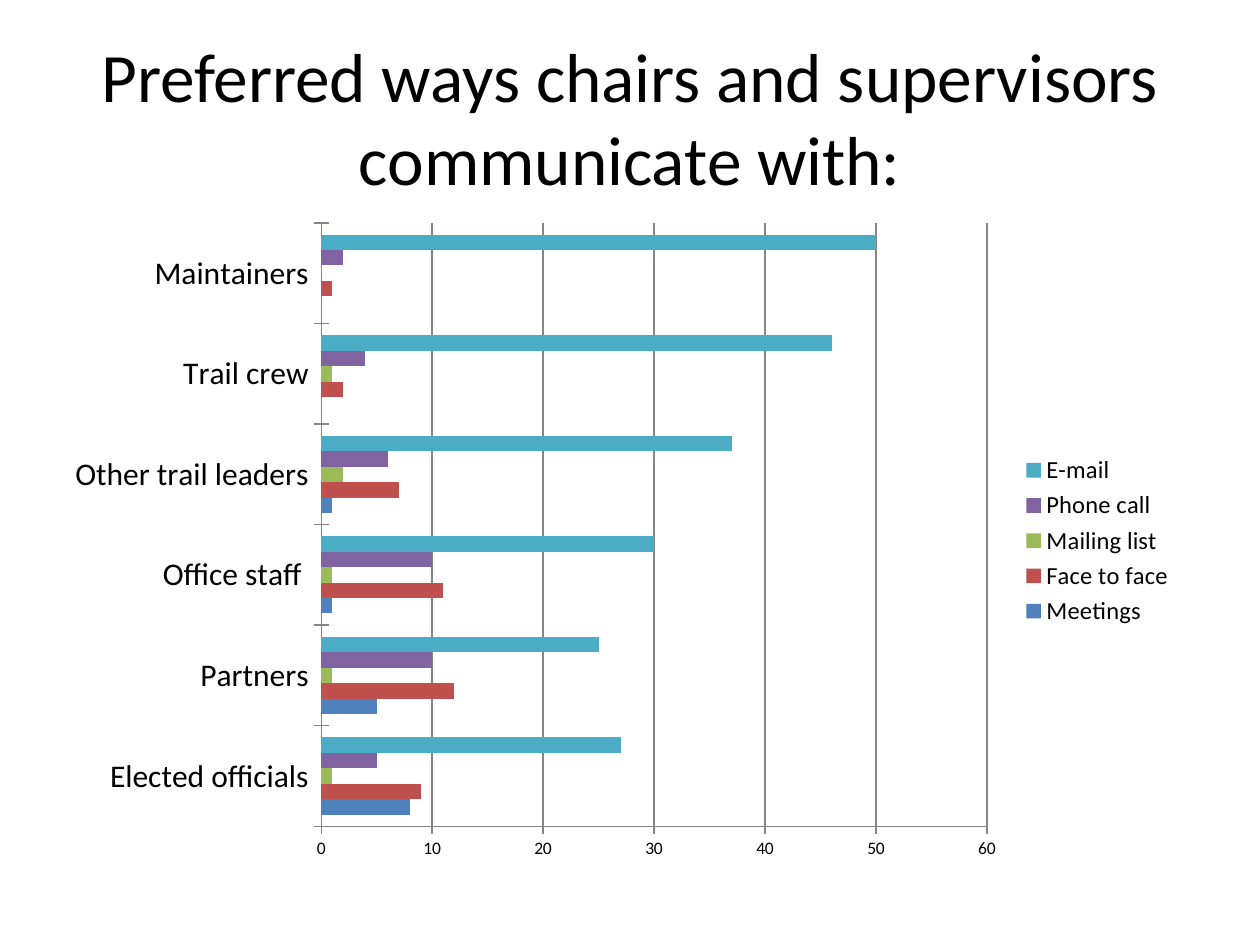
from dataclasses import dataclass

from pptx import Presentation
from pptx.chart.axis import _BaseAxis
from pptx.chart.data import CategoryChartData
from pptx.dml.color import RGBColor
from pptx.enum.chart import XL_CHART_TYPE, XL_LEGEND_POSITION, XL_TICK_MARK
from pptx.enum.text import MSO_ANCHOR, PP_ALIGN
from pptx.slide import Slide
from pptx.text.text import Font
from pptx.util import Cm, Pt

FONT_NAME = "Calibri"
BLACK = RGBColor(0x00, 0x00, 0x00)
GRAY = RGBColor(0x86, 0x86, 0x86)
BLUE = RGBColor(0x4F, 0x81, 0xBD)
RED = RGBColor(0xC0, 0x50, 0x4D)
GREEN = RGBColor(0x9B, 0xBB, 0x59)
PURPLE = RGBColor(0x80, 0x64, 0xA2)
TEAL = RGBColor(0x4B, 0xAC, 0xC6)


@dataclass(frozen=True)
class Channel:
    name: str
    counts: tuple[int, ...]
    color: RGBColor


AUDIENCES = (
    "Elected officials",
    "Partners",
    "Office staff ",
    "Other trail leaders",
    "Trail crew",
    "Maintainers",
)
CHANNELS = (
    Channel("Meetings", (8, 5, 1, 1, 0, 0), BLUE),
    Channel("Face to face", (9, 12, 11, 7, 2, 1), RED),
    Channel("Mailing list", (1, 1, 1, 2, 1, 0), GREEN),
    Channel("Phone call", (5, 10, 10, 6, 4, 2), PURPLE),
    Channel("E-mail", (27, 25, 30, 37, 46, 50), TEAL),
)


def format_font(font: Font, size: float, color: RGBColor = BLACK) -> None:
    font.name = FONT_NAME
    font.size = Pt(size)
    font.color.rgb = color


def add_text(slide: Slide, text: str, *, left: float, top: float, width: float,
             height: float, size: float, color: RGBColor = BLACK,
             alignment: PP_ALIGN = PP_ALIGN.CENTER) -> None:
    shape = slide.shapes.add_textbox(Cm(left), Cm(top), Cm(width), Cm(height))
    text_frame = shape.text_frame
    text_frame.word_wrap = True
    text_frame.vertical_anchor = MSO_ANCHOR.MIDDLE
    paragraph = text_frame.paragraphs[0]
    paragraph.alignment = alignment
    run = paragraph.add_run()
    run.text = text
    format_font(run.font, size, color)


def format_axis(axis: _BaseAxis, size: float, gridlines: bool) -> None:
    axis.major_tick_mark = XL_TICK_MARK.CROSS
    axis.minor_tick_mark = XL_TICK_MARK.NONE
    axis.has_major_gridlines = gridlines
    lines = [axis.format.line]
    if gridlines:
        lines.append(axis.major_gridlines.format.line)
    for line in lines:
        line.color.rgb = GRAY
        line.width = Pt(0.75)
    format_font(axis.tick_labels.font, size)


def add_channel_chart(slide: Slide) -> None:
    chart_data = CategoryChartData()
    chart_data.categories = AUDIENCES
    for channel in CHANNELS:
        chart_data.add_series(channel.name, channel.counts)
    chart = slide.shapes.add_chart(
        XL_CHART_TYPE.BAR_CLUSTERED, Cm(1.06), Cm(4.23), Cm(22.86), Cm(13.34), chart_data
    ).chart
    chart.has_title = False
    format_font(chart.font, 10)

    plot = chart.plots[0]
    plot.vary_by_categories = False
    plot.gap_width = 150
    plot.overlap = 0
    for series, channel in zip(plot.series, CHANNELS):
        series.format.fill.solid()
        series.format.fill.fore_color.rgb = channel.color

    format_axis(chart.category_axis, 18, gridlines=False)
    format_axis(chart.value_axis, 10, gridlines=True)
    chart.value_axis.minimum_scale = 0
    chart.value_axis.maximum_scale = 60
    chart.value_axis.major_unit = 10

    chart.has_legend = True
    chart.legend.position = XL_LEGEND_POSITION.RIGHT
    chart.legend.include_in_layout = False
    format_font(chart.legend.font, 14)


def main() -> None:
    presentation = Presentation()
    presentation.slide_width = Cm(25.4)
    presentation.slide_height = Cm(19.05)
    slide = presentation.slides.add_slide(presentation.slide_layouts[6])
    add_text(slide, "Preferred ways chairs and supervisors communicate with:",
             left=1.27, top=0.76, width=22.86, height=3.18, size=39.6)
    add_channel_chart(slide)
    presentation.save("out.pptx")


if __name__ == "__main__":
    main()
